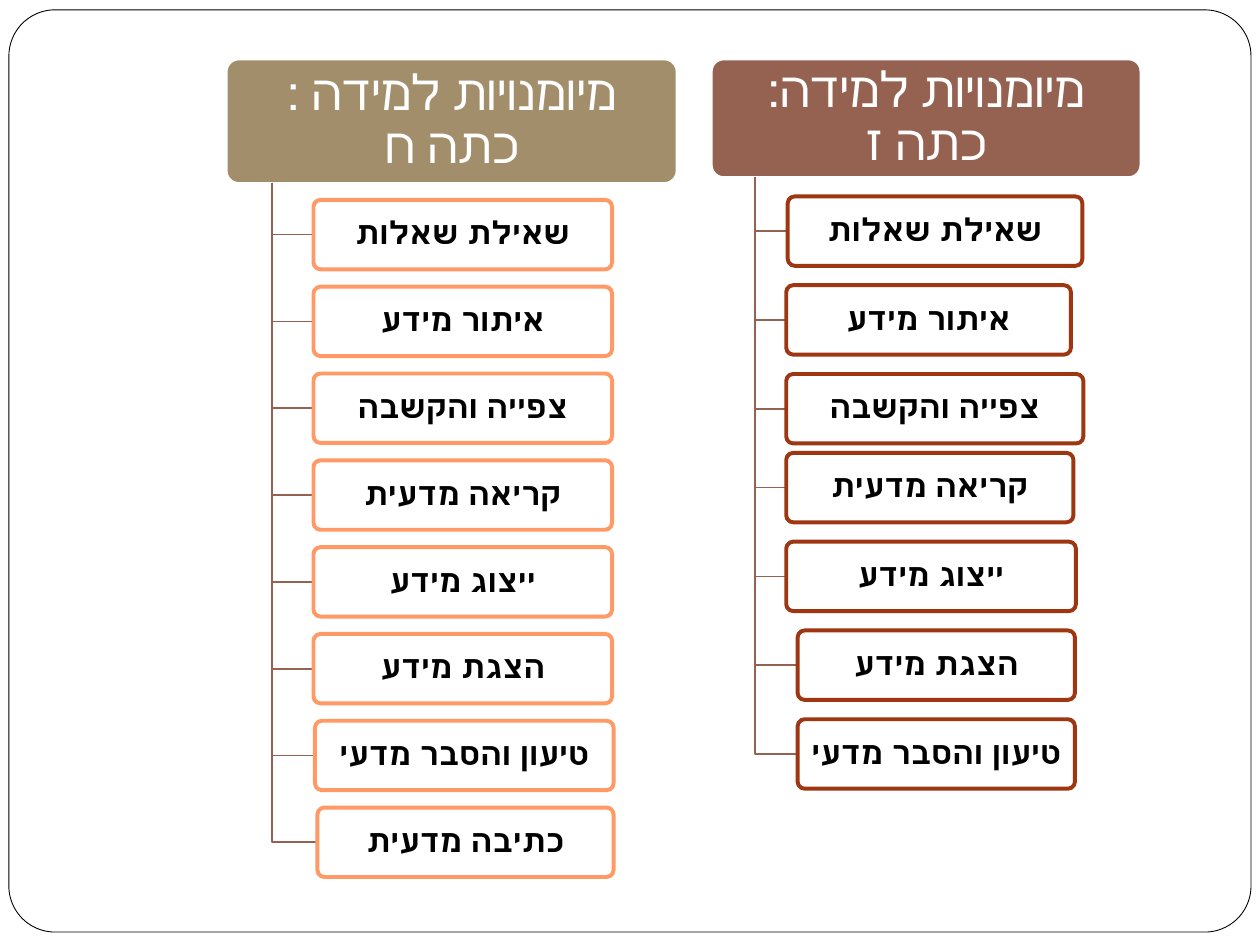
from dataclasses import dataclass

from lxml.etree import SubElement
from pptx import Presentation
from pptx.dml.color import RGBColor
from pptx.enum.shapes import MSO_SHAPE
from pptx.enum.text import MSO_ANCHOR, PP_ALIGN
from pptx.oxml.ns import qn
from pptx.util import Cm, Pt

WHITE = RGBColor(0xFF, 0xFF, 0xFF)
BLACK = RGBColor(0x00, 0x00, 0x00)
OLIVE = RGBColor(0xA2, 0x8E, 0x6A)
MAROON = RGBColor(0x95, 0x62, 0x51)
ORANGE = RGBColor(0xFF, 0x99, 0x66)
RUST = RGBColor(0x9E, 0x36, 0x11)

FONT = "Times New Roman"
HEADER_TOP = 1.2
SKILL_HEIGHT = 1.4
TRUNK_SHARE = 0.1


@dataclass
class Grade:
    title: str
    left: float
    width: float
    height: float
    fill: RGBColor
    outline: RGBColor
    first_top: float
    step: float
    skills: list


GRADE_EIGHT = Grade(
    "מיומנויות למידה : כתה ח", 4.57, 9.07, 2.49, OLIVE, ORANGE, 4.03, 1.75,
    [
        ("שאילת שאלות", 6.32, 6.02, 0),
        ("איתור מידע", 6.32, 6.02, 0),
        ("צפייה והקשבה", 6.32, 6.02, 0),
        ("קריאה מדעית", 6.32, 6.02, 0),
        ("ייצוג מידע", 6.32, 6.02, 0),
        ("הצגת מידע", 6.32, 6.02, 0),
        ("טיעון והסבר מדעי", 6.35, 6.02, 0),
        ("כתיבה מדעית", 6.4, 5.97, 0),
    ],
)
GRADE_SEVEN = Grade(
    "מיומנויות למידה: כתה ז", 14.35, 8.64, 2.37, MAROON, RUST, 3.96, 1.79,
    [
        ("שאילת שאלות", 15.88, 5.94, 0),
        ("איתור מידע", 15.85, 5.74, 0),
        ("צפייה והקשבה", 15.85, 5.99, 0),
        ("קריאה מדעית", 15.85, 5.79, -0.2),
        ("ייצוג מידע", 15.85, 5.84, -0.2),
        ("הצגת מידע", 16.08, 5.59, -0.2),
        ("טיעון והסבר מדעי", 16.08, 5.59, -0.2),
    ],
)


def add_panel(slide, left, top, width, height, fill, outline, weight, rounding=0.1):
    panel = slide.shapes.add_shape(
        MSO_SHAPE.ROUNDED_RECTANGLE, Cm(left), Cm(top), Cm(width), Cm(height)
    )
    panel.adjustments[0] = rounding
    panel.shadow.inherit = False
    panel.fill.solid()
    panel.fill.fore_color.rgb = fill
    panel.line.color.rgb = outline
    panel.line.width = Pt(weight)
    return panel


def write_label(panel, text, size, color, bold, side_inset, end_inset):
    frame = panel.text_frame
    frame.word_wrap = True
    frame.vertical_anchor = MSO_ANCHOR.MIDDLE
    frame.margin_left = frame.margin_right = Cm(side_inset)
    frame.margin_top = frame.margin_bottom = Cm(end_inset)
    label = frame.paragraphs[0]
    label.text = text
    label.alignment = PP_ALIGN.CENTER
    label.line_spacing = 0.9
    label._p.get_or_add_pPr().set("rtl", "1")
    label.font.name = FONT
    label.font.size = Pt(size)
    label.font.bold = bold
    label.font.color.rgb = color


def set_opacity(panel, percent):
    color = panel.fill._xPr.find(qn("a:solidFill"))[0]
    SubElement(color, qn("a:alpha")).set("val", str(percent * 1000))


def add_branch(slide, trunk, start, middle, end):
    builder = slide.shapes.build_freeform(Cm(trunk), Cm(start))
    builder.add_line_segments(
        [(Cm(trunk), Cm(middle)), (Cm(end), Cm(middle))], close=False
    )
    branch = builder.convert_to_shape()
    branch.shadow.inherit = False
    branch.fill.background()
    branch.line.color.rgb = MAROON
    branch.line.width = Pt(1)


def add_grade(slide, grade):
    header = add_panel(
        slide, grade.left, HEADER_TOP, grade.width, grade.height, grade.fill, WHITE, 1
    )
    write_label(header, grade.title, 28, WHITE, False, 0.22, 0.17)
    trunk = grade.left + grade.width * TRUNK_SHARE
    for row, (text, left, width, nudge) in enumerate(grade.skills):
        top = grade.first_top + row * grade.step + nudge
        add_branch(
            slide, trunk, HEADER_TOP + grade.height, top + SKILL_HEIGHT / 2, left
        )
        skill = add_panel(
            slide, left, top, width, SKILL_HEIGHT, WHITE, grade.outline, 2.25
        )
        set_opacity(skill, 90)
        write_label(skill, text, 18, BLACK, True, 0.14, 0.11)


def main():
    """Build the slide comparing the learning skills of two grades."""
    deck = Presentation()
    deck.slide_width, deck.slide_height = Cm(25.4), Cm(19.05)
    slide = deck.slides.add_slide(deck.slide_layouts[6])
    add_panel(slide, 0.18, 0.2, 25.04, 18.59, WHITE, BLACK, 0.5, 0.05)
    for grade in (GRADE_EIGHT, GRADE_SEVEN):
        add_grade(slide, grade)
    deck.save("out.pptx")


if __name__ == "__main__":
    main()
